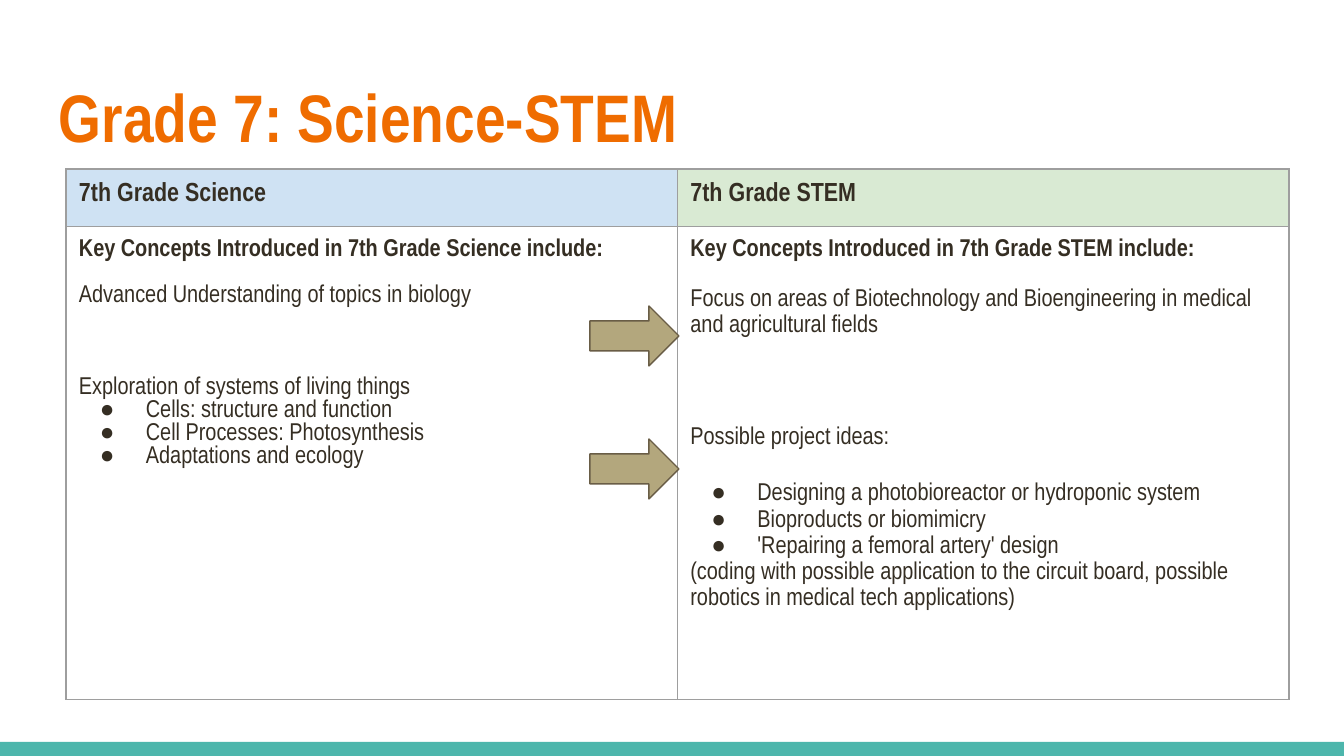
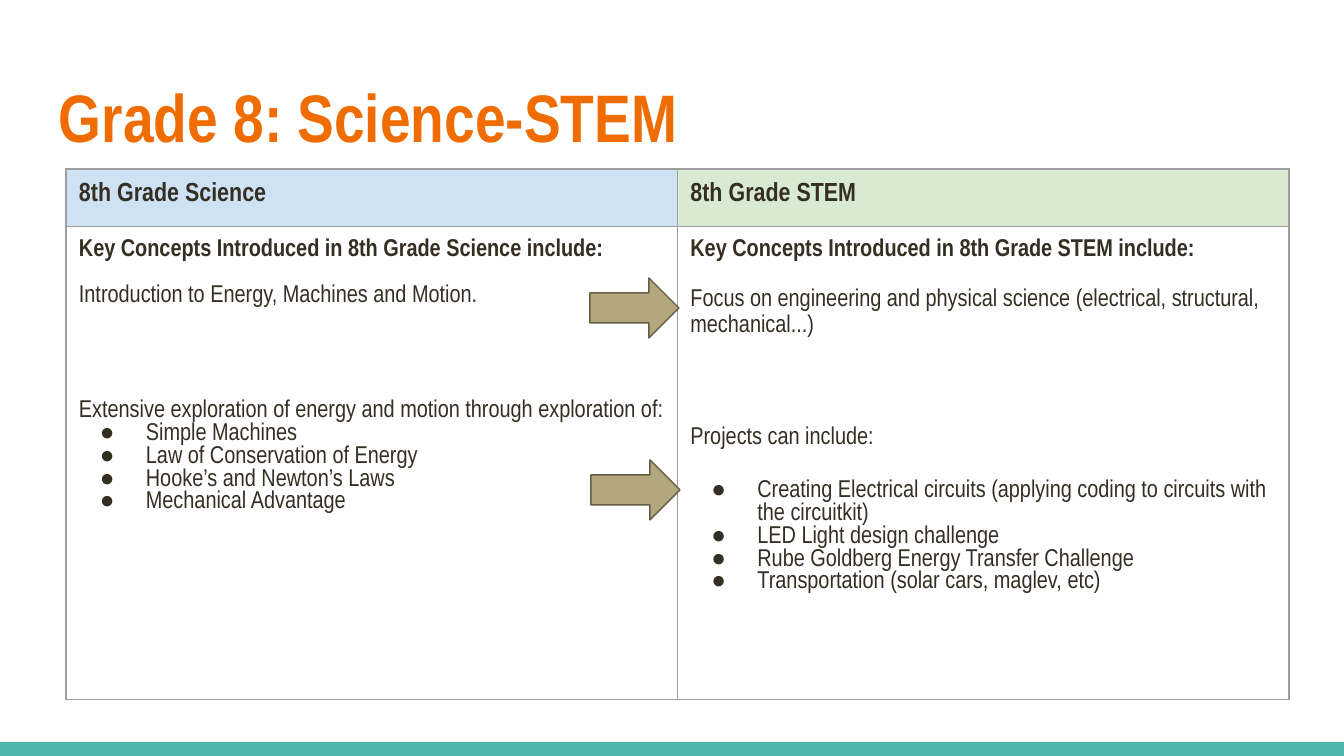
import dataclasses

import pptx
import pptx.dml.color
import pptx.enum.shapes
import pptx.enum.text
import pptx.oxml
import pptx.oxml.ns
import pptx.util

EMU_PER_PX = 914400 / 134.4
SLIDE_W, SLIDE_H = 1344, 756


@dataclasses.dataclass(frozen=True)
class Theme:
    font: str = "Arial Narrow"
    title: str = "EF6C00"
    ink: str = "352E23"
    band: str = "4DB6AC"
    science: str = "CFE2F3"
    stem: str = "D9EAD3"
    border: str = "9E9E9E"
    arrow: str = "B3A77D"
    arrow_edge: str = "695D46"
    title_size: int = 36
    header_size: int = 14
    body_size: int = 13
    line_width: float = 0.75
    inset: int = 13
    loose: float = 1.15     # line spacing of the STEM text
    line_gap: float = 12.3  # height of one body line, in points
    para_gap: int = 16      # space after a STEM paragraph, in points


@dataclasses.dataclass
class Line:
    text: str
    bold: bool = False
    leading: float = 1.0
    after: float = 0
    bullet: bool = False


THEME = Theme()


def px(length):
    return pptx.util.Emu(round(length * EMU_PER_PX))


def rgb(colour):
    return pptx.dml.color.RGBColor.from_string(colour)


class Deck:
    def __init__(self, theme):
        self.theme = theme
        self.presentation = pptx.Presentation()
        self.presentation.slide_width = px(SLIDE_W)
        self.presentation.slide_height = px(SLIDE_H)
        self.slide = None

    def new_slide(self, title):
        layout = self.presentation.slide_layouts[6]
        self.slide = self.presentation.slides.add_slide(layout)
        self.shape("RECTANGLE", 0, 742, SLIDE_W, 14, self.theme.band)
        self.title(title)

    def shape(self, preset, x, y, w, h, fill, edge=None):
        kind = pptx.enum.shapes.MSO_SHAPE[preset]
        shape = self.slide.shapes.add_shape(kind, px(x), px(y), px(w), px(h))
        shape.shadow.inherit = False
        shape.fill.solid()
        shape.fill.fore_color.rgb = rgb(fill)
        if edge:
            shape.line.color.rgb = rgb(edge)
            shape.line.width = pptx.util.Pt(self.theme.line_width)
        else:
            shape.line.fill.background()

    def arrow(self, x, y):
        self.shape("RIGHT_ARROW", x, y, 89, 60, self.theme.arrow, self.theme.arrow_edge)

    def set_insets(self, holder):
        for side in ("left", "right", "top", "bottom"):
            setattr(holder, f"margin_{side}", px(self.theme.inset))

    def style(self, paragraph, size, colour, bold):
        for run in paragraph.runs:
            run.font.name = self.theme.font
            run.font.size = pptx.util.Pt(size)
            run.font.bold = bold
            run.font.color.rgb = rgb(colour)

    def title(self, text):
        box = self.slide.shapes.add_textbox(px(46), px(66), px(1253), px(103))
        frame = box.text_frame
        frame.word_wrap = True
        frame.vertical_anchor = pptx.enum.text.MSO_ANCHOR.BOTTOM
        self.set_insets(frame)
        frame.text = text
        self.style(frame.paragraphs[0], self.theme.title_size, self.theme.title, True)

    def bullet(self, paragraph):
        properties = paragraph._p.get_or_add_pPr()
        properties.set("marL", str(px(67)))
        properties.set("indent", str(px(-46)))
        namespace = pptx.oxml.ns.nsdecls("a")
        for mark in (f'<a:buFont {namespace} typeface="{self.theme.font}"/>',
                     f'<a:buChar {namespace} char="●"/>'):
            properties.append(pptx.oxml.parse_xml(mark))

    def borders(self, cell):
        properties = cell._tc.get_or_add_tcPr()
        width = pptx.util.Pt(self.theme.line_width)
        for side in "LRTB":
            properties.append(pptx.oxml.parse_xml(
                f'<a:ln{side} {pptx.oxml.ns.nsdecls("a")} w="{width}"><a:solidFill>'
                f'<a:srgbClr val="{self.theme.border}"/></a:solidFill></a:ln{side}>'))

    def cell(self, cell, lines, size, fill=None):
        self.set_insets(cell)
        self.borders(cell)
        if fill:
            cell.fill.solid()
            cell.fill.fore_color.rgb = rgb(fill)
        else:
            cell.fill.background()
        cell.text_frame.text = "\n".join(line.text for line in lines)
        for paragraph, line in zip(cell.text_frame.paragraphs, lines):
            paragraph.line_spacing = line.leading
            paragraph.space_after = pptx.util.Pt(line.after)
            if line.bullet:
                self.bullet(paragraph)
            self.style(paragraph, size, self.theme.ink, line.bold)

    def comparison(self, grade, science, stem):
        frame = self.slide.shapes.add_table(2, 2, px(66), px(169), px(1223), px(523))
        table = frame.table
        table.first_row = table.horz_banding = False
        for row, height in zip(table.rows, (50, 473)):
            row.height = px(height)
        subjects = (("Science", self.theme.science, science),
                    ("STEM", self.theme.stem, stem))
        for column, (subject, fill, concepts) in enumerate(subjects):
            name = f"{grade} Grade {subject}"
            heading = Line(f"Key Concepts Introduced in {name} include:",
                           bold=True, after=self.theme.line_gap)
            self.cell(table.cell(0, column), [Line(name, bold=True)],
                      self.theme.header_size, fill)
            self.cell(table.cell(1, column), [heading, *concepts], self.theme.body_size)

    def save(self):
        self.presentation.save("out.pptx")


def bullets(texts, leading=1.0):
    return [Line(text, leading=leading, bullet=True) for text in texts]


def science_concepts(topic, gap_lines, lead, items):
    return [Line(topic, after=gap_lines * THEME.line_gap), Line(lead), *bullets(items)]


def stem_concepts(focus, lead, items, leading=1.0):
    loose, gap = THEME.loose, THEME.para_gap
    return [Line(focus, leading=loose, after=2 * gap + loose * THEME.line_gap),
            Line(lead, leading=loose, after=gap), *bullets(items, leading)]


def main():
    deck = Deck(THEME)

    # Grade 7
    deck.new_slide("Grade 7: Science-STEM")
    deck.comparison(
        "7th",
        science_concepts(
            "Advanced Understanding of topics in biology", 3,
            "Exploration of systems of living things",
            ["Cells: structure and function", "Cell Processes: Photosynthesis",
             "Adaptations and ecology"]),
        stem_concepts(
            "Focus on areas of Biotechnology and Bioengineering in medical and "
            "agricultural fields",
            "Possible project ideas:",
            ["Designing a photobioreactor or hydroponic system",
             "Bioproducts or biomimicry", "'Repairing a femoral artery' design"],
            THEME.loose)
        + [Line("(coding with possible application to the circuit board, possible "
                "robotics in medical tech applications)", leading=THEME.loose)])
    deck.arrow(590, 306)
    deck.arrow(590, 439)

    # Grade 8
    deck.new_slide("Grade 8: Science-STEM")
    deck.comparison(
        "8th",
        science_concepts(
            "Introduction to Energy, Machines and Motion.", 4,
            "Extensive exploration of energy and motion through exploration of:",
            ["Simple Machines", "Law of Conservation of Energy",
             "Hooke’s and Newton’s Laws", "Mechanical Advantage"]),
        stem_concepts(
            "Focus on engineering and physical science (electrical, structural, "
            "mechanical...)",
            "Projects can include:",
            ["Creating Electrical circuits (applying coding to circuits with the "
             "circuitkit)", "LED Light design challenge",
             "Rube Goldberg Energy Transfer Challenge",
             "Transportation (solar cars, maglev, etc)"]))
    deck.arrow(590, 278)
    deck.arrow(591, 460)

    deck.save()


if __name__ == "__main__":
    main()
